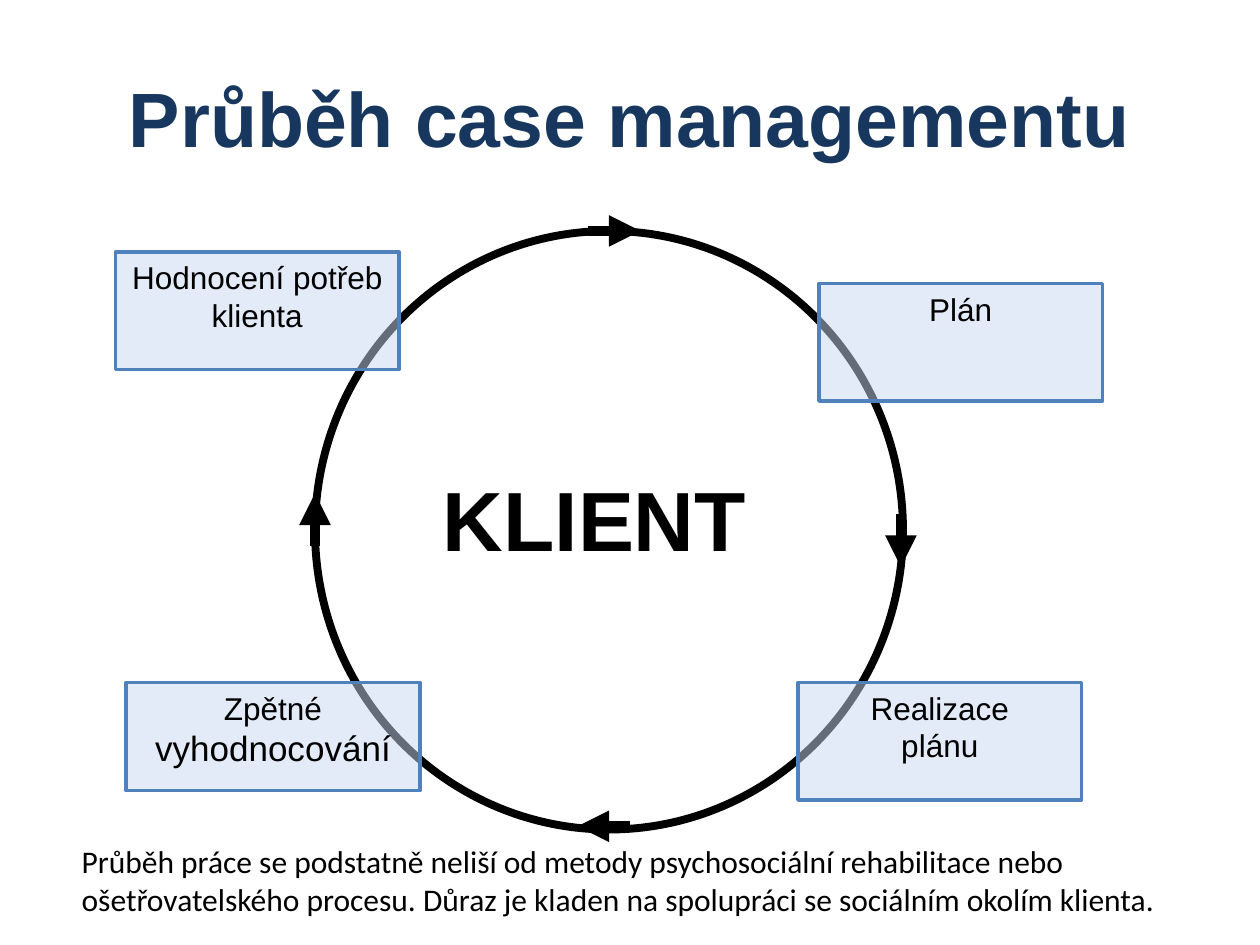
from pptx import Presentation
from pptx.dml.color import RGBColor
from pptx.enum.shapes import MSO_CONNECTOR, MSO_SHAPE
from pptx.enum.text import MSO_ANCHOR, PP_ALIGN
from pptx.oxml.ns import qn
from pptx.util import Inches, Pt
from lxml.etree import SubElement

NAVY = RGBColor(0x17, 0x37, 0x5E)
BLACK = RGBColor(0x00, 0x00, 0x00)
PALE_BLUE = RGBColor(0xC6, 0xD9, 0xF1)
BLUE = RGBColor(0x4F, 0x81, 0xBD)

CELL = Inches(1) / 12  # the grid has 120 columns and 90 rows


def grid(*cells):
    return [round(cell * CELL) for cell in cells]


class CycleSlide:
    heading_font = "Arial"
    note_font = "Calibri"

    def __init__(self, deck):
        self.page = deck.slides.add_slide(deck.slide_layouts[5])

    def add_lines(self, frame, lines, font=heading_font, color=BLACK,
                  bold=False, align=PP_ALIGN.CENTER):
        """Add one paragraph for each (text, size) pair."""
        for index, (text, size) in enumerate(lines):
            para = frame.paragraphs[0] if index == 0 else frame.add_paragraph()
            para.alignment = align
            span = para.add_run()
            span.text = text
            span.font.name = font
            span.font.size = Pt(size)
            span.font.bold = bold
            span.font.color.rgb = color

    def title(self, text, place):
        box = self.page.shapes.title
        box.left, box.top, box.width, box.height = grid(*place)
        box.text_frame.vertical_anchor = MSO_ANCHOR.MIDDLE
        self.add_lines(box.text_frame, [(text, 44)], color=NAVY, bold=True)

    def ring(self, place):
        ring = self.page.shapes.add_shape(MSO_SHAPE.OVAL, *grid(*place))
        ring.shadow.inherit = False
        ring.fill.background()
        ring.line.color.rgb = BLACK
        ring.line.width = Pt(4.5)

    def step(self, lines, place):
        box = self.page.shapes.add_shape(MSO_SHAPE.RECTANGLE, *grid(*place))
        box.shadow.inherit = False
        box.fill.solid()
        box.fill.fore_color.rgb = PALE_BLUE
        tint = box._element.spPr.find(qn("a:solidFill"))[0]
        SubElement(tint, qn("a:alpha")).set("val", "50000")
        box.line.color.rgb = BLUE
        box.line.width = Pt(2)
        box.text_frame.word_wrap = True
        box.text_frame.vertical_anchor = MSO_ANCHOR.TOP
        self.add_lines(box.text_frame, lines)

    def arrow(self, start, end):
        arrow = self.page.shapes.add_connector(
            MSO_CONNECTOR.STRAIGHT, *grid(*start, *end))
        arrow.line.color.rgb = BLACK
        arrow.line.width = Pt(6)
        outline = arrow._element.spPr.find(qn("a:ln"))
        SubElement(outline, qn("a:tailEnd")).set("type", "triangle")
        SubElement(arrow._element.spPr, qn("a:effectLst"))

    def text(self, text, size, place, wrap=True, **style):
        box = self.page.shapes.add_textbox(*grid(*place))
        box.text_frame.word_wrap = wrap
        self.add_lines(box.text_frame, [(text, size)],
                       align=PP_ALIGN.LEFT, **style)


def main():
    deck = Presentation()
    deck.slide_width, deck.slide_height = Inches(10), Inches(7.5)
    slide = CycleSlide(deck)
    slide.title("Průběh case managementu", (6, 3.6, 108, 15))

    # Cycle with its four steps, each followed by the arrow leading on
    slide.ring((30, 22, 56, 57))
    steps = [
        ([("Realizace", 18), ("plánu", 18)], (76, 65, 27, 11.2),
         (85.8, 49), (85.8, 54)),
        ([("Zpětné", 18), ("vyhodnocování", 20)], (12, 65, 28, 10.3),
         (60, 78.7), (55, 78.7)),
        ([("Hodnocení potřeb klienta", 18)], (11, 24, 27, 11.2),
         (30, 52), (30, 47)),
        ([("Plán", 18)], (78, 27, 27, 11.2),
         (56, 22), (61, 22)),
    ]
    for lines, place, start, end in steps:
        slide.step(lines, place)
        slide.arrow(start, end)

    # Centre of the cycle and the note below it
    slide.text("KLIENT", 48, (41, 43.9, 31.3, 10.8), wrap=False, bold=True)
    slide.text("Průběh práce se podstatně neliší od metody psychosociální "
               "rehabilitace nebo ošetřovatelského procesu. Důraz je kladen "
               "na spolupráci se sociálním okolím klienta.",
               18, (6.6, 79.6, 108.2, 8.5), font=slide.note_font)
    deck.save("out.pptx")


if __name__ == "__main__":
    main()
